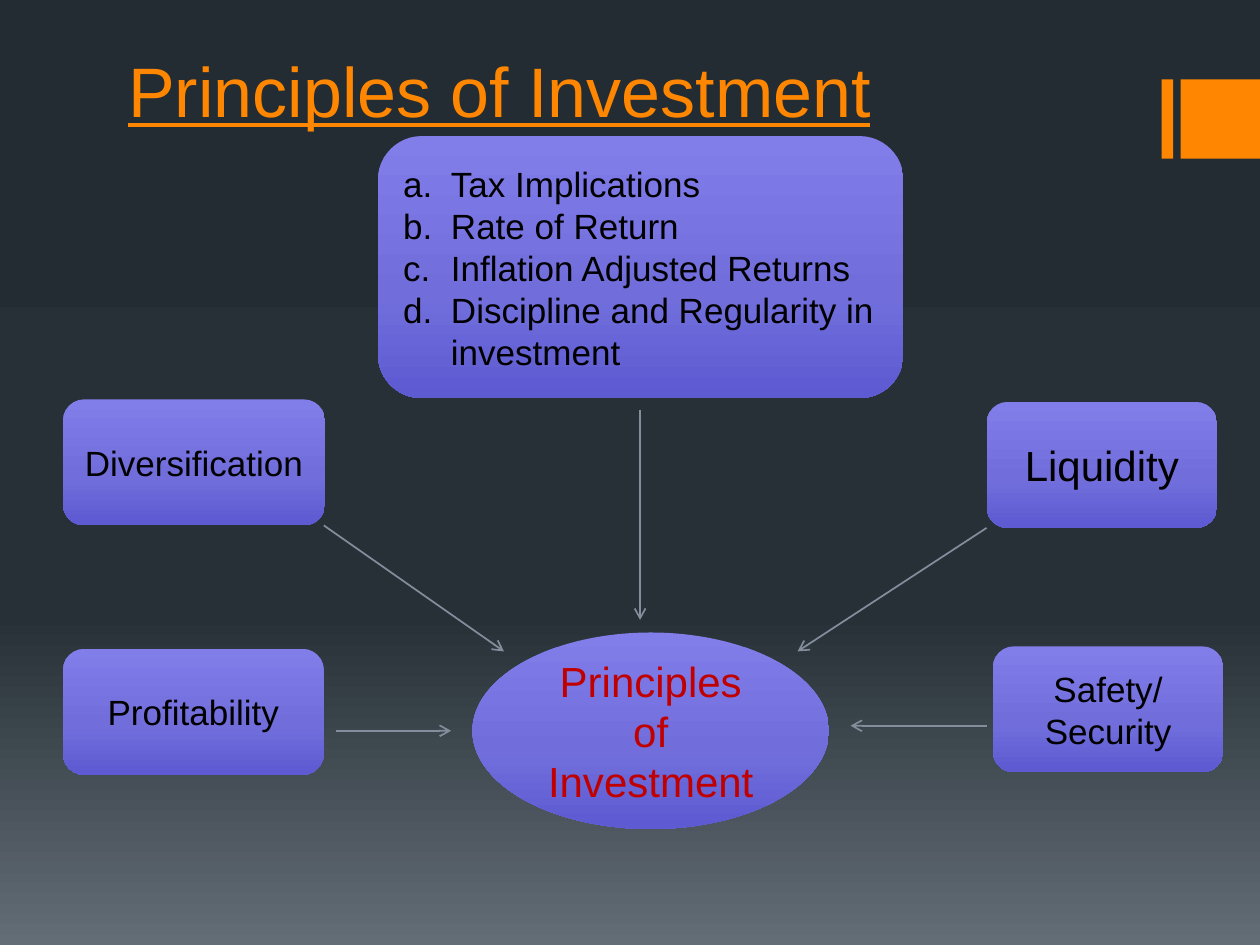
from lxml.etree import SubElement
from pptx import Presentation
from pptx.dml.color import RGBColor
from pptx.enum.shapes import MSO_CONNECTOR, MSO_SHAPE as Shape
from pptx.enum.text import MSO_ANCHOR as Anchor, PP_ALIGN as Align
from pptx.oxml.ns import qn
from pptx.util import Inches, Pt

ORANGE, BLACK, RED, GRAY = "FF8600", "000000", "C00000", "838D9B"
BACKDROP = [(0, "242C33"), (65, "273037"), (100, "636D76")]
VIOLET = [(0, "817EEA"), (60, "716EDC"), (100, "5D5AD2")]
CENTER = "Principles of Investment"
TAGS = [0.63, 0.09, 9.22], [0.63, 0.63, 9.37]
PRINCIPLES = [
    "Tax Implications",
    "Rate of Return",
    "Inflation Adjusted Returns",
    "Discipline and Regularity in investment",
]
CARDS = [
    ((7.83, 3.19, 1.83, 1), ["Liquidity"], 24),
    ((7.88, 5.13, 1.83, 1), ["Safety/", "Security"], 20),
    ((0.5, 3.17, 2.08, 1), ["Diversification"], 20),
    ((0.5, 5.15, 2.07, 1), ["Profitability"], 20),
]
ARROWS = [
    (2.57, 4.17, 4, 5.17),
    (5.08, 3.25, 5.08, 4.92),
    (7.83, 4.19, 6.33, 5.17),
    (7.83, 5.76, 6.75, 5.76),
    (2.67, 5.8, 3.58, 5.8),
]


def color(value):
    """Turn a hex string into a colour."""
    return RGBColor.from_string(value)


def paint_gradient(fill, element, stops):
    """Give a fill a top-to-bottom gradient with the given stops."""
    fill.gradient()
    fill.gradient_angle = 270
    stop_list = next(element.iter(qn("a:gsLst")))
    for old in list(stop_list):
        stop_list.remove(old)
    for percent, value in stops:
        stop = SubElement(stop_list, qn("a:gs"), pos=str(percent * 1000))
        SubElement(stop, qn("a:srgbClr"), val=value)


def write(box, lines, size, value, align=Align.CENTER, anchor=Anchor.MIDDLE, underline=None):
    """Write one paragraph for each line into a box."""
    frame = box.text_frame
    frame.word_wrap = True
    frame.vertical_anchor = anchor
    style = {"name": "Arial", "size": Pt(size), "underline": underline}
    for index, line in enumerate(lines):
        para = frame.add_paragraph() if index else frame.paragraphs[0]
        para.alignment = align
        span = para.add_run()
        span.text = line
        for name, setting in style.items():
            setattr(span.font, name, setting)
        span.font.color.rgb = color(value)


def number_paragraphs(box):
    """Letter the paragraphs of a box with a hanging indent."""
    indent = Inches(0.38)
    for para in box.text_frame.paragraphs:
        properties = para._p.get_or_add_pPr()
        properties.set("marL", str(indent))
        properties.set("indent", str(-indent))
        SubElement(properties, qn("a:buFont"), typeface="+mj-lt")
        SubElement(properties, qn("a:buAutoNum"), type="alphaLcPeriod")


def add_box(slide, kind, place):
    """Add a plain shape without line or shadow."""
    box = slide.shapes.add_shape(kind, *map(Inches, place))
    box.shadow.inherit = False
    box.line.fill.background()
    return box


def add_card(slide, place, lines, size, value=BLACK, kind=Shape.ROUNDED_RECTANGLE, align=Align.CENTER):
    """Add a violet shape with text."""
    card = add_box(slide, kind, place)
    paint_gradient(card.fill, card.element, VIOLET)
    write(card, lines, size, value, align)
    return card


def add_tag(slide, height, width, left):
    """Add an orange block at the right edge."""
    tag = add_box(slide, Shape.RECTANGLE, (left, 0.63, width, height))
    tag.fill.solid()
    tag.fill.fore_color.rgb = color(ORANGE)


def add_title(slide):
    """Add the underlined heading."""
    title = slide.shapes.add_textbox(*map(Inches, (0.92, 0.17, 8, 0.92)))
    write(title, [CENTER], 40, ORANGE, Align.LEFT, Anchor.BOTTOM, True)


def add_arrow(slide, ends):
    """Add a thin line with an open arrowhead at its end."""
    arrow = slide.shapes.add_connector(MSO_CONNECTOR.STRAIGHT, *map(Inches, ends))
    arrow.line.width = Pt(1)
    arrow.line.color.rgb = color(GRAY)
    SubElement(arrow.line._get_or_add_ln(), qn("a:tailEnd"), type="arrow")
    SubElement(arrow.element.spPr, qn("a:effectLst"))


def main():
    """Build and save the slide."""
    deck = Presentation()
    deck.slide_width, deck.slide_height = Inches(10), Inches(7.5)
    slide = deck.slides.add_slide(deck.slide_layouts[6])
    paint_gradient(slide.background.fill, slide.element, BACKDROP)
    for tag in TAGS:
        add_tag(slide, *tag)
    add_title(slide)
    number_paragraphs(add_card(slide, (3, 1.08, 4.17, 2.08), PRINCIPLES, 20, align=Align.LEFT))
    for card in CARDS:
        add_card(slide, *card)
    add_card(slide, (3.75, 5.02, 2.83, 1.56), [CENTER], 24, RED, Shape.OVAL)
    for ends in ARROWS:
        add_arrow(slide, ends)
    deck.save("out.pptx")


if __name__ == "__main__":
    main()
